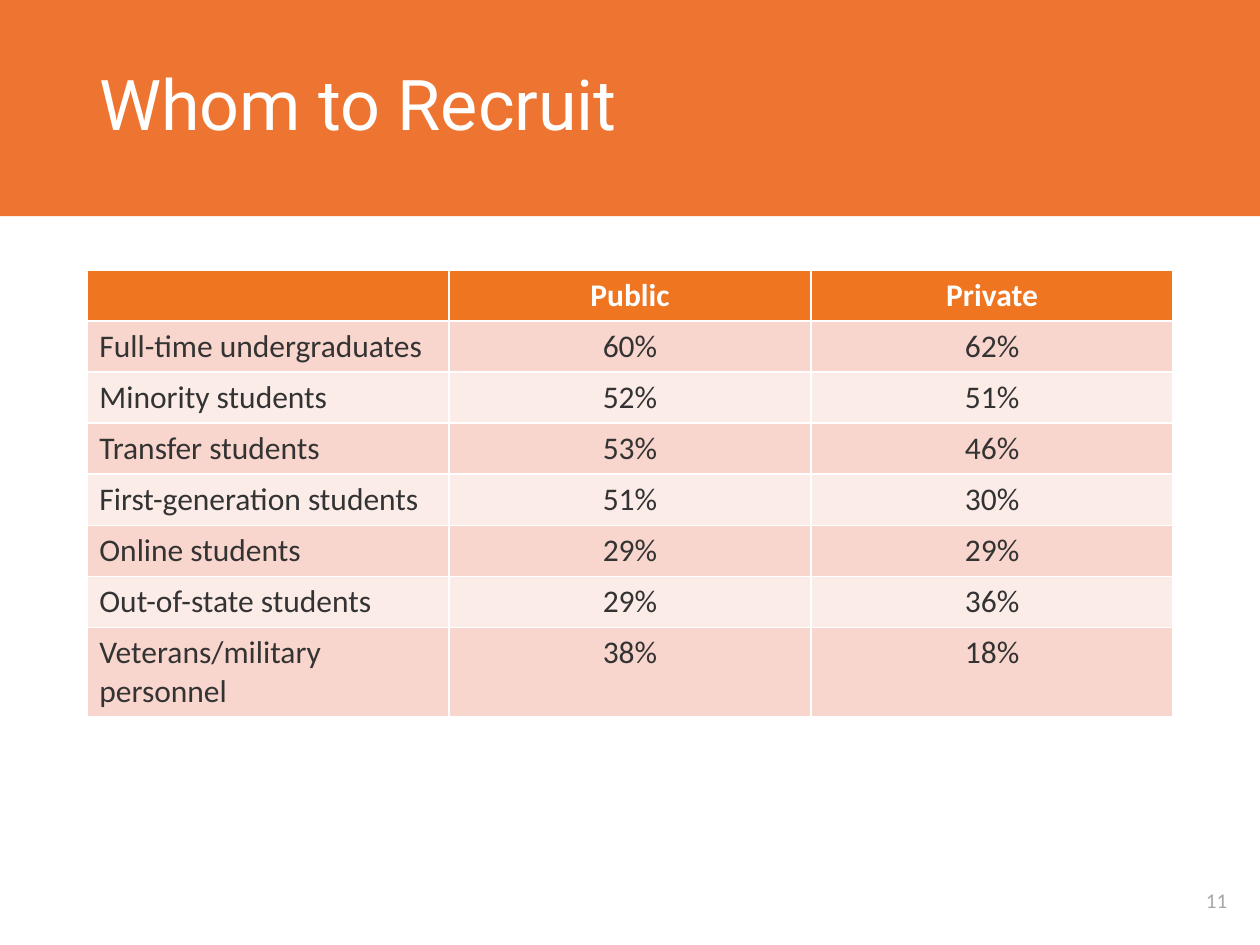
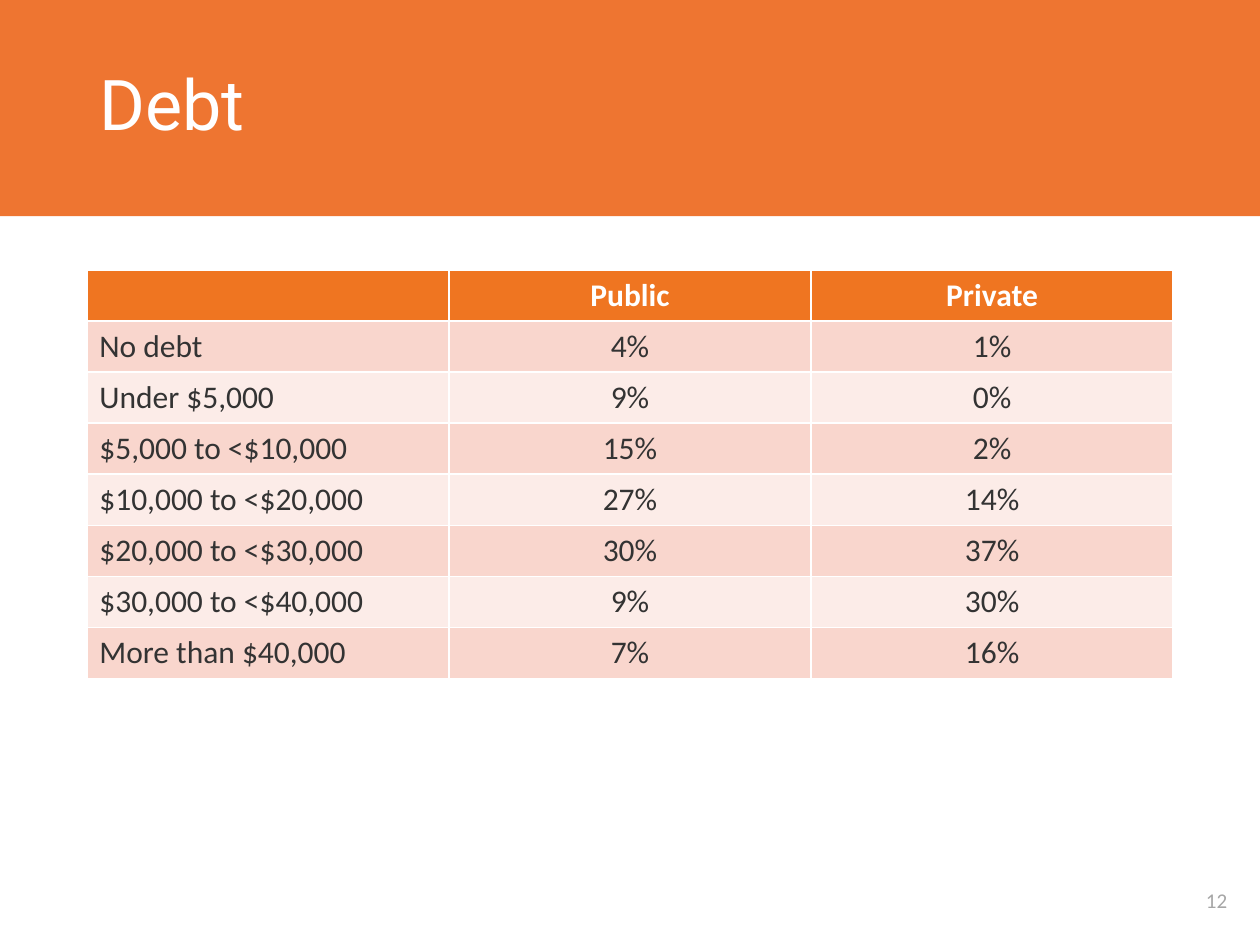
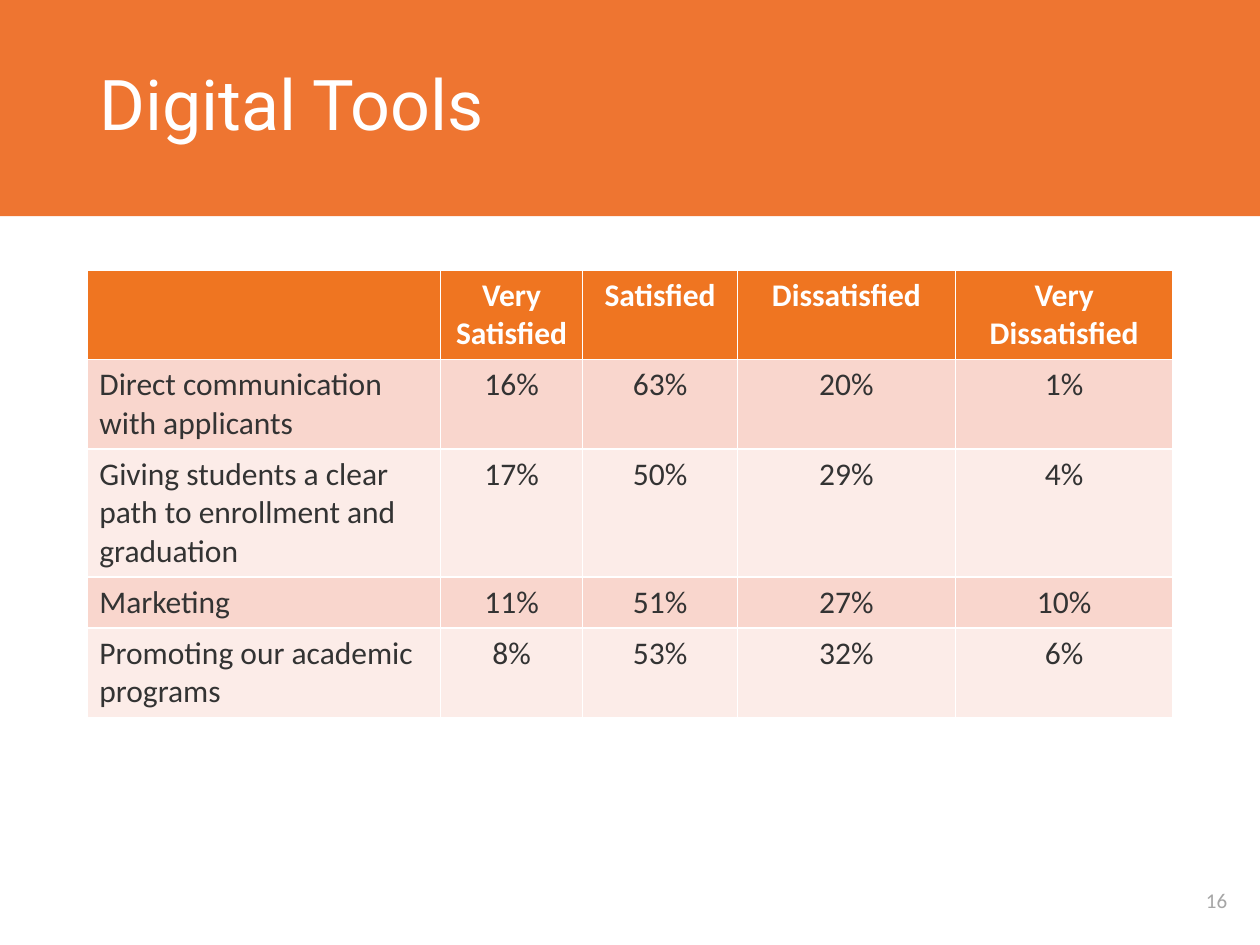
from dataclasses import dataclass

from pptx import Presentation
from pptx.dml.color import RGBColor
from pptx.enum.shapes import MSO_SHAPE
from pptx.enum.text import MSO_ANCHOR, MSO_AUTO_SIZE, PP_ALIGN
from pptx.util import Cm, Pt

RECTANGLE = MSO_SHAPE.RECTANGLE
MIDDLE = MSO_ANCHOR.MIDDLE
NO_AUTOFIT = MSO_AUTO_SIZE.NONE
LEFT, CENTER = PP_ALIGN.LEFT, PP_ALIGN.CENTER
TITLE_ONLY = 5


@dataclass(frozen=True)
class Theme:
    band: str = "EE7531"
    header: str = "EF7521"
    row_fills: tuple = ("F9D6CD", "FCECE8")
    light: str = "FFFFFF"
    text: str = "333333"
    muted: str = "A6A6A6"
    title_font: str = "Roboto"
    body_font: str = "Calibri"
    title_size: int = 40
    body_size: int = 18
    number_size: int = 12


THEME = Theme()

# Boxes are left, top, width, height in centimetres.
BAND_BOX = (-0.03, 0, 25.46, 4.36)
TITLE_BOX = (1.75, 0, 21.9, 4.34)
TABLE_BOX = (1.75, 5.44, 21.9, 8.24)
NUMBER_BOX = (23.65, 17.65, 1.75, 0.99)
ROW_HEIGHT = 1.03

SECTORS = ["", "Public", "Private"]
SLIDES = [
    dict(
        title="Whom to Recruit",
        number=11,
        shares=(1, 1, 1),
        rows=[
            SECTORS,
            ["Full-time undergraduates", "60%", "62%"],
            ["Minority students", "52%", "51%"],
            ["Transfer students", "53%", "46%"],
            ["First-generation students", "51%", "30%"],
            ["Online students", "29%", "29%"],
            ["Out-of-state students", "29%", "36%"],
            ["Veterans/military personnel", "38%", "18%"],
        ],
    ),
    dict(
        title="Debt",
        number=12,
        shares=(1, 1, 1),
        rows=[
            SECTORS,
            ["No debt", "4%", "1%"],
            ["Under $5,000", "9%", "0%"],
            ["$5,000 to <$10,000", "15%", "2%"],
            ["$10,000 to <$20,000", "27%", "14%"],
            ["$20,000 to <$30,000", "30%", "37%"],
            ["$30,000 to <$40,000", "9%", "30%"],
            ["More than $40,000", "7%", "16%"],
        ],
    ),
    dict(
        title="Digital Tools",
        number=16,
        shares=(2.81, 1.13, 1.23, 1.73, 1.73),
        rows=[
            ["", "Very Satisfied", "Satisfied", "Dissatisfied", "Very Dissatisfied"],
            ["Direct communication with applicants", "16%", "63%", "20%", "1%"],
            ["Giving students a clear path to enrollment and graduation",
             "17%", "50%", "29%", "4%"],
            ["Marketing", "11%", "51%", "27%", "10%"],
            ["Promoting our academic programs", "8%", "53%", "32%", "6%"],
        ],
    ),
]


def lengths(box):
    return [Cm(v) for v in box]


def rgb(color):
    return RGBColor.from_string(color)


def write(tf, text, *, color, size=THEME.body_size, font=THEME.body_font,
          bold=False, align=LEFT, spacing=None):
    tf.word_wrap = True
    p = tf.paragraphs[0]
    p.alignment = align
    p.line_spacing = spacing
    if not text:
        p.font.size = Pt(size)
        return
    r = p.add_run()
    r.text = text
    r.font.name = font
    r.font.size = Pt(size)
    r.font.bold = bold
    r.font.color.rgb = rgb(color)


def add_band(layout, slide, box):
    """Draw the title band and move it to the back of the shared layout."""
    sp = slide.shapes.add_shape(RECTANGLE, *lengths(box))
    sp.shadow.inherit = False
    sp.fill.solid()
    sp.fill.fore_color.rgb = rgb(THEME.band)
    sp.line.fill.background()
    layout.shapes.element.insert(2, sp.element)


def set_title(slide, text, box):
    sp = slide.shapes.title
    sp.left, sp.top, sp.width, sp.height = lengths(box)
    tf = sp.text_frame
    tf.auto_size = NO_AUTOFIT
    tf.vertical_anchor = MIDDLE
    write(tf, text, color=THEME.light, size=THEME.title_size,
          font=THEME.title_font, spacing=0.9)


def add_number(slide, number, box):
    tf = slide.shapes.add_textbox(*lengths(box)).text_frame
    tf.vertical_anchor = MIDDLE
    write(tf, str(number), color=THEME.muted, size=THEME.number_size, align=CENTER)


def add_survey_table(slide, rows, shares, box):
    """Add a table whose column widths divide the box by the given shares."""
    left, top, width, _ = box
    frame = slide.shapes.add_table(
        len(rows), len(shares),
        *lengths((left, top, width, ROW_HEIGHT * len(rows))))
    table = frame.table
    for column, share in zip(table.columns, shares):
        column.width = Cm(width * share / sum(shares))
    for i, row in enumerate(rows):
        table.rows[i].height = Cm(ROW_HEIGHT)
        is_header = i == 0
        fill = THEME.header if is_header else THEME.row_fills[(i - 1) % 2]
        for j, text in enumerate(row):
            cell = table.cell(i, j)
            cell.fill.solid()
            cell.fill.fore_color.rgb = rgb(fill)
            write(cell.text_frame, text, bold=is_header,
                  color=THEME.light if is_header else THEME.text,
                  align=CENTER if j else LEFT)


def add_survey_slide(prs, layout, title, number, shares, rows):
    slide = prs.slides.add_slide(layout)
    set_title(slide, title, TITLE_BOX)
    add_survey_table(slide, rows, shares, TABLE_BOX)
    add_number(slide, number, NUMBER_BOX)
    return slide


def main():
    prs = Presentation()
    prs.slide_width, prs.slide_height = Cm(25.4), Cm(19.05)
    layout = prs.slide_layouts[TITLE_ONLY]
    slides = [add_survey_slide(prs, layout, **content) for content in SLIDES]
    add_band(layout, slides[0], BAND_BOX)
    prs.save("out.pptx")


if __name__ == "__main__":
    main()
